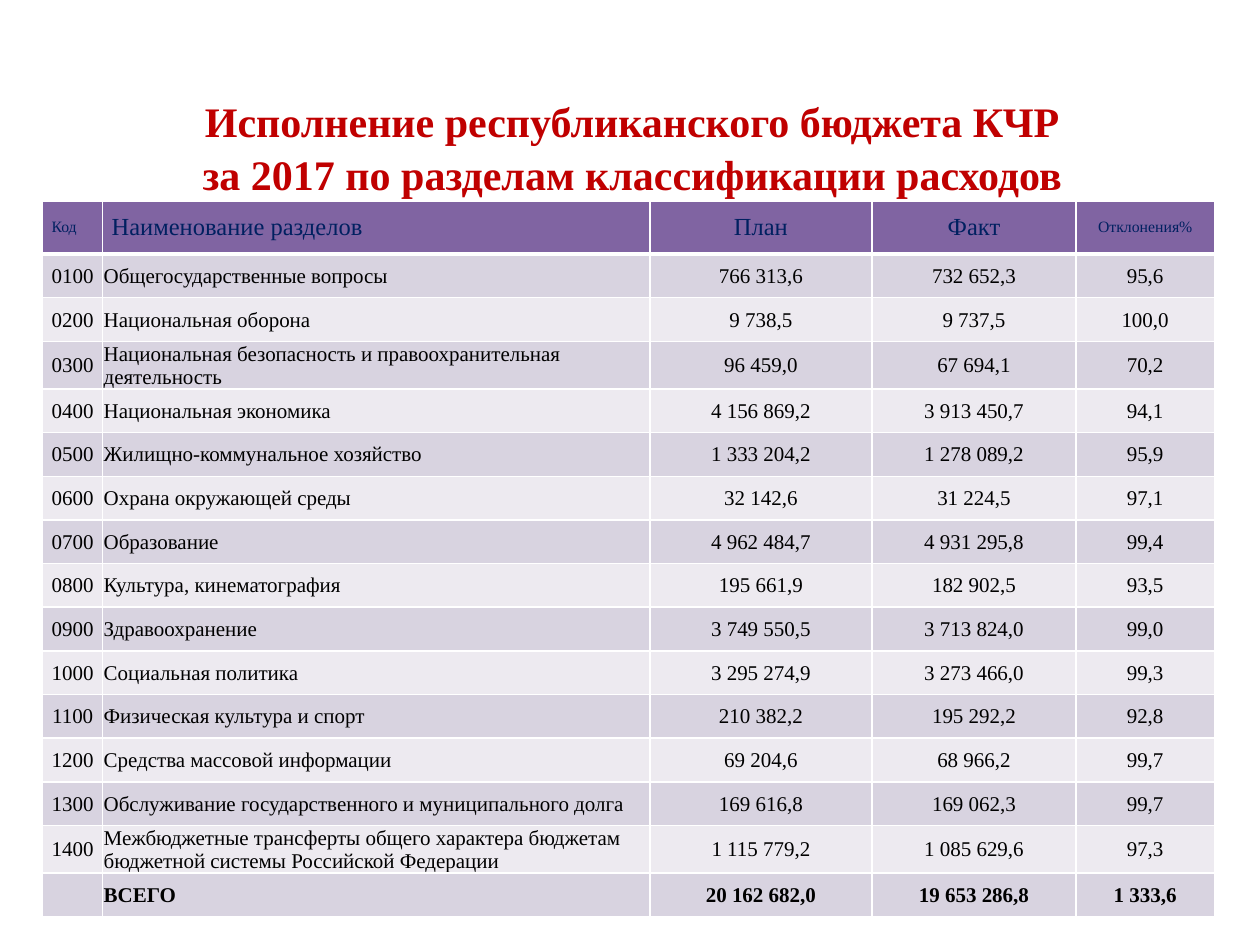
"""Builds a slide with the 2017 execution of the republican budget by expenditure section."""
from dataclasses import dataclass

from lxml.etree import SubElement
from pptx import Presentation
from pptx.dml.color import RGBColor
from pptx.enum.text import MSO_ANCHOR, PP_ALIGN
from pptx.oxml.ns import qn
from pptx.slide import Slide
from pptx.table import _Cell
from pptx.util import Cm, Pt

FONT = "Times New Roman"
COLORS = {
    "title": "C00000",
    "header_text": "002060",
    "header": "8064A2",
    "odd": "D8D3E0",
    "even": "EDEAF0",
    "text": "000000",
    "border": "FFFFFF",
}
TITLE_LINES = (
    "Исполнение республиканского бюджета КЧР",
    "за 2017 по разделам классификации расходов",
)


@dataclass(frozen=True)
class Column:
    heading: str
    width: float
    heading_size: int
    heading_align: PP_ALIGN
    align: PP_ALIGN


@dataclass(frozen=True)
class Section:
    code: str
    name: str
    plan: str
    fact: str
    percent: str

    def values(self) -> tuple[str, ...]:
        return self.code, self.name, self.plan, self.fact, self.percent


@dataclass(frozen=True)
class CellStyle:
    fill: str
    color: str
    insets: tuple[float, float, float, float]
    bottom_border: int = 1
    bold: bool = False


COLUMNS = (
    Column("Код", 1.21, 9, PP_ALIGN.LEFT, PP_ALIGN.CENTER),
    Column("Наименование разделов", 11.03, 14, PP_ALIGN.LEFT, PP_ALIGN.LEFT),
    Column("План", 4.48, 14, PP_ALIGN.CENTER, PP_ALIGN.CENTER),
    Column("Факт", 4.11, 14, PP_ALIGN.CENTER, PP_ALIGN.CENTER),
    Column("Отклонения%", 2.79, 9, PP_ALIGN.CENTER, PP_ALIGN.CENTER),
)
SECTIONS = (
    Section("0100", "Общегосударственные вопросы", "766 313,6", "732 652,3", "95,6"),
    Section("0200", "Национальная оборона", "9 738,5", "9 737,5", "100,0"),
    Section("0300", "Национальная безопасность и правоохранительная деятельность",
            "96 459,0", "67 694,1", "70,2"),
    Section("0400", "Национальная экономика", "4 156 869,2", "3 913 450,7", "94,1"),
    Section("0500", "Жилищно-коммунальное хозяйство", "1 333 204,2", "1 278 089,2", "95,9"),
    Section("0600", "Охрана окружающей среды", "32 142,6", "31 224,5", "97,1"),
    Section("0700", "Образование", "4 962 484,7", "4 931 295,8", "99,4"),
    Section("0800", "Культура, кинематография", "195 661,9", "182 902,5", "93,5"),
    Section("0900", "Здравоохранение", "3 749 550,5", "3 713 824,0", "99,0"),
    Section("1000", "Социальная политика", "3 295 274,9", "3 273 466,0", "99,3"),
    Section("1100", "Физическая культура и спорт", "210 382,2", "195 292,2", "92,8"),
    Section("1200", "Средства массовой информации", "69 204,6", "68 966,2", "99,7"),
    Section("1300", "Обслуживание государственного и муниципального долга",
            "169 616,8", "169 062,3", "99,7"),
    Section("1400", "Межбюджетные трансферты общего характера бюджетам "
            "бюджетной системы Российской Федерации",
            "1 115 779,2", "1 085 629,6", "97,3"),
    Section("", "ВСЕГО", "20 162 682,0", "19 653 286,8", "1 333,6"),
)
HEADER_HEIGHT, ROW_HEIGHT = 1.07, 0.88


def add_span(paragraph, text: str, size: int, color: str, bold: bool) -> None:
    span = paragraph.add_run()
    span.text = text
    span.font.name = FONT
    span.font.size = Pt(size)
    span.font.bold = bold
    span.font.color.rgb = RGBColor.from_string(COLORS[color])


def set_borders(cell: _Cell, bottom: int) -> None:
    properties = cell._tc.get_or_add_tcPr()
    widths = {"a:lnL": 1, "a:lnR": 1, "a:lnT": 1, "a:lnB": bottom}
    for position, (side, width) in enumerate(widths.items()):
        line = SubElement(properties, qn(side), w=str(Pt(width)))
        fill = SubElement(line, qn("a:solidFill"))
        SubElement(fill, qn("a:srgbClr"), val=COLORS["border"])
        properties.insert(position, line)


def fill_cell(cell: _Cell, text: str, size: int, align: PP_ALIGN, style: CellStyle) -> None:
    cell.fill.solid()
    cell.fill.fore_color.rgb = RGBColor.from_string(COLORS[style.fill])
    set_borders(cell, style.bottom_border)
    left, top, right, bottom = map(Cm, style.insets)
    cell.margin_left, cell.margin_top = left, top
    cell.margin_right, cell.margin_bottom = right, bottom
    cell.vertical_anchor = MSO_ANCHOR.MIDDLE
    paragraph = cell.text_frame.paragraphs[0]
    paragraph.alignment = align
    if text:
        add_span(paragraph, text, size, style.color, style.bold)


def add_title(page: Slide) -> None:
    box = page.shapes.title
    box.left, box.top, box.width, box.height = Cm(2.79), Cm(1.73), Cm(19.91), Cm(2.31)
    frame = box.text_frame
    frame.word_wrap = True
    frame.vertical_anchor = MSO_ANCHOR.TOP
    for index, line in enumerate(TITLE_LINES):
        paragraph = frame.add_paragraph() if index else frame.paragraphs[0]
        paragraph.alignment = PP_ALIGN.CENTER
        paragraph.line_spacing = 1.06
        add_span(paragraph, line, 24, "title", True)


def add_budget_table(page: Slide) -> None:
    width = sum(column.width for column in COLUMNS)
    height = HEADER_HEIGHT + ROW_HEIGHT * len(SECTIONS)
    table = page.shapes.add_table(len(SECTIONS) + 1, len(COLUMNS), Cm(0.86), Cm(4.05),
                                  Cm(width), Cm(height)).table
    header = CellStyle("header", "header_text", (0.18, 0.1, 0.18, 0.1), bottom_border=3)
    table.rows[0].height = Cm(HEADER_HEIGHT)
    for index, column in enumerate(COLUMNS):
        table.columns[index].width = Cm(column.width)
        fill_cell(table.cell(0, index), column.heading, column.heading_size,
                  column.heading_align, header)
    for number, section in enumerate(SECTIONS, start=1):
        table.rows[number].height = Cm(ROW_HEIGHT)
        style = CellStyle("odd" if number % 2 else "even", "text", (0.02, 0.02, 0.02, 0),
                          bold=not section.code)
        for index, (column, value) in enumerate(zip(COLUMNS, section.values())):
            fill_cell(table.cell(number, index), value, 12, column.align, style)


def main() -> None:
    deck = Presentation()
    deck.slide_width, deck.slide_height = Cm(25.4), Cm(19.05)
    page = deck.slides.add_slide(deck.slide_layouts[5])
    add_title(page)
    add_budget_table(page)
    deck.save("out.pptx")


if __name__ == "__main__":
    main()
